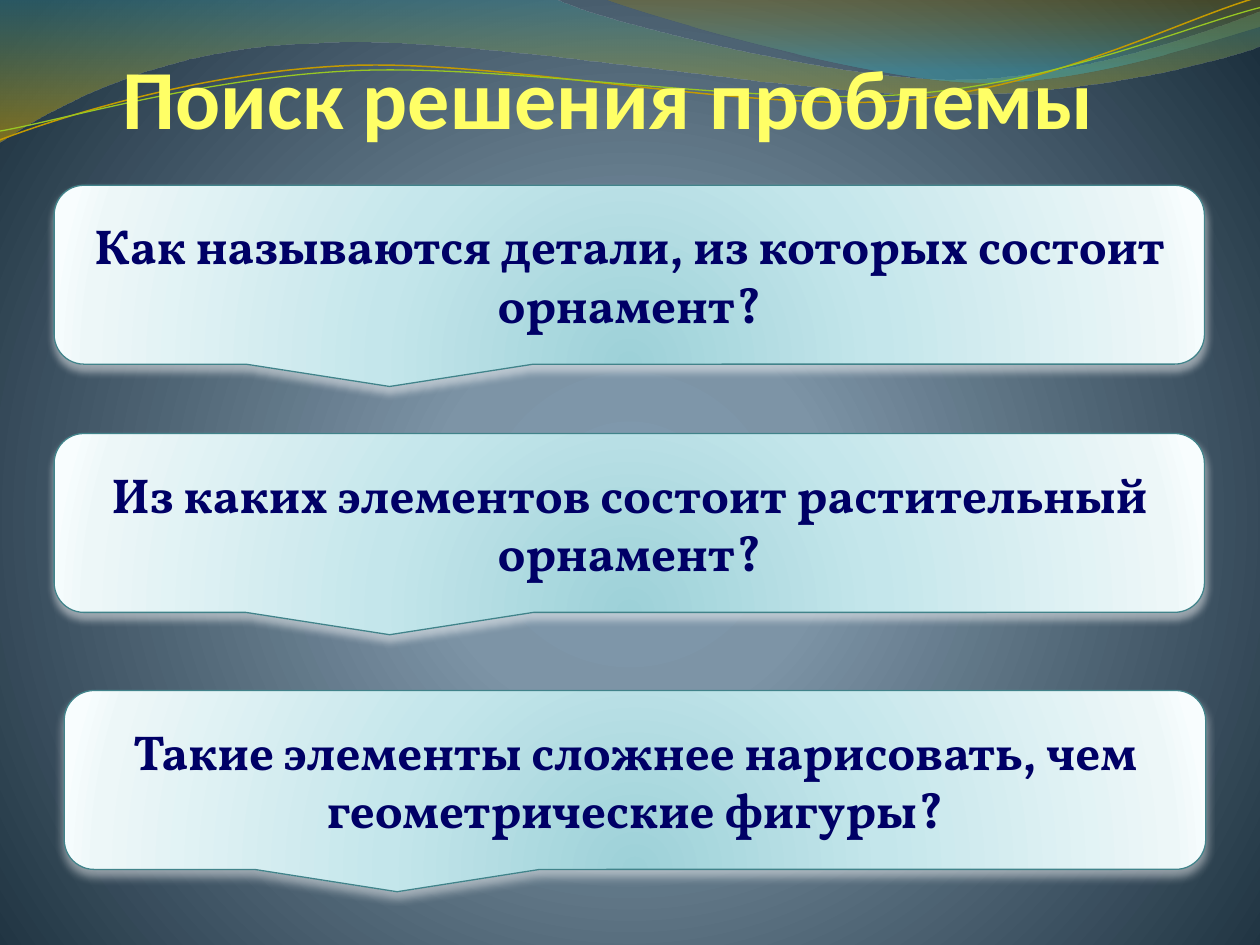
from math import cos, radians, sin

from lxml import etree
from pptx import Presentation
from pptx.dml.color import RGBColor
from pptx.enum.shapes import MSO_SHAPE
from pptx.enum.text import MSO_ANCHOR, PP_ALIGN
from pptx.oxml.ns import qn
from pptx.util import Inches, Pt

CALLOUT = MSO_SHAPE.ROUNDED_RECTANGULAR_CALLOUT
MIDDLE, BOTTOM = MSO_ANCHOR.MIDDLE, MSO_ANCHOR.BOTTOM
CENTER = PP_ALIGN.CENTER

YELLOW = RGBColor(0xFF, 0xFF, 0x66)
NAVY = RGBColor(0x00, 0x00, 0x66)
TEAL = RGBColor(0x41, 0x83, 0x8A)
ORANGE = RGBColor(0xC4, 0x9A, 0x00)
GREEN = RGBColor(0x98, 0xC7, 0x23)
WHITE = RGBColor(0xFF, 0xFF, 0xFF)

PAGE_STOPS = [(0, RGBColor(0x80, 0x9A, 0xAF), 100),
              (25, RGBColor(0x7D, 0x94, 0xA6), 100),
              (100, RGBColor(0x1C, 0x30, 0x3E), 100)]
CARD_STOPS = [(0, RGBColor(0x9D, 0xD1, 0xD8), 100),
              (43, RGBColor(0xC4, 0xE6, 0xEB), 100),
              (93, RGBColor(0xED, 0xF7, 0xF8), 100),
              (100, RGBColor(0xF8, 0xFD, 0xFE), 100)]
LEFT_STOPS = [(0, RGBColor(0x3B, 0x88, 0x90), 45),
              (100, RGBColor(0xC9, 0x9E, 0x00), 55)]
RIGHT_STOPS = [(0, RGBColor(0xA4, 0x81, 0x00), 30),
               (80, RGBColor(0x3E, 0xA9, 0xB4), 45)]

LEFT_WAVE = [
    [(0, 0)], [(4.4, -0.01)],
    [(4.76, 0.17), (6.64, 0.63), (7.58, 0.63)],
    [(8.53, 0.63), (9.58, 0.26), (10, 0.09)],
    [(10.01, 0.36)],
    [(9.83, 0.44), (8.7, 0.76), (7.46, 0.75)],
    [(6.22, 0.75), (3.82, 0.28), (2.57, 0.34)],
    [(1.29, 0.36), (0.46, 0.83), (-0.01, 1.13)],
    [(0, 0)],
]
RIGHT_WAVE = [
    [(4.79, -0.01)],
    [(5.09, 0.11), (6.82, 0.62), (7.69, 0.65)],
    [(8.56, 0.69), (9.61, 0.32), (10, 0.21)],
    [(10, 0)], [(4.79, -0.01)],
]
ORANGE_CURVE = [
    [(0, 1.11)],
    [(0.48, 0.93), (1.58, 0.57), (2.77, 0.52)],
    [(3.95, 0.47), (5.93, 0.89), (7.13, 0.8)],
    [(8.33, 0.71), (9.38, 0.15), (9.98, -0.02)],
]
GREEN_CURVE = [
    [(0, 1.04)],
    [(0.47, 0.96), (1.64, 0.61), (2.83, 0.56)],
    [(4.03, 0.51), (5.97, 0.84), (7.17, 0.75)],
    [(8.36, 0.67), (9.41, 0.21), (10, 0.06)],
]
CURVE_TILT = 357.3
QUESTIONS = [
    ("Как называются детали, из которых состоит орнамент?", (0.43, 1.47, 9.13, 1.42)),
    ("Из каких элементов состоит растительный орнамент?", (0.43, 3.44, 9.13, 1.42)),
    ("Такие элементы сложнее нарисовать, чем геометрические фигуры?",
     (0.51, 5.48, 9.06, 1.42)),
]


def add_color(parent, color, opacity):
    """Add a colour with an opacity in percent."""
    node = etree.SubElement(parent, qn("a:srgbClr"), val=str(color))
    if opacity < 100:
        etree.SubElement(node, qn("a:alpha"), val=str(opacity * 1000))


def set_gradient(owner, fill, stops, center=None):
    """Fill with a circular gradient around center, or a downward one."""
    fill.gradient()
    gradient = owner.element.find(".//" + qn("a:gradFill"))
    for child in list(gradient):
        gradient.remove(child)
    stop_list = etree.SubElement(gradient, qn("a:gsLst"))
    for position, color, opacity in stops:
        stop = etree.SubElement(stop_list, qn("a:gs"), pos=str(position * 1000))
        add_color(stop, color, opacity)
    if center:
        circle = etree.SubElement(gradient, qn("a:path"))
        circle.set("path", "circle")
        sides = {side: str(value * 1000) for side, value in zip("ltrb", center)}
        etree.SubElement(circle, qn("a:fillToRect"), **sides)
    else:
        etree.SubElement(gradient, qn("a:lin"), ang="5400000", scaled="0")


def turn(point, center, degrees):
    """Turn a point clockwise around a center."""
    x, y = point[0] - center[0], point[1] - center[1]
    cosine, sine = cos(radians(degrees)), sin(radians(degrees))
    return center[0] + x * cosine - y * sine, center[1] + x * sine + y * cosine


def add_outline(shapes, box, segments, closed, tilt=0):
    """Draw straight and cubic segments; the tilt is kept as rotation of the box."""
    left, top, width, height = box
    center = left + width / 2, top + height / 2
    points = [tuple(map(Inches, turn(point, center, -tilt)))
              for segment in segments for point in segment]
    builder = shapes.build_freeform(*points[0])
    builder.add_line_segments(points[1:], close=closed)
    shape = builder.convert_to_shape()
    lines = iter(shape.element.findall(".//" + qn("a:lnTo")))
    for segment in segments[1:]:
        first, *others = [next(lines) for _ in segment]
        if others:
            first.tag = qn("a:cubicBezTo")
        for line in others:
            first.append(line[0])
            line.getparent().remove(line)
    shape.rotation = tilt
    shape.shadow.inherit = False
    return shape


def add_waves(page):
    """Draw the two tinted waves and the group of two thin curves."""
    for box, segments, stops in (
            ((-0.01, -0.01, 10.02, 1.14), LEFT_WAVE, LEFT_STOPS),
            ((4.79, -0.01, 5.21, 0.7), RIGHT_WAVE, RIGHT_STOPS)):
        wave = add_outline(page.shapes, box, segments, True)
        set_gradient(wave, wave.fill, stops)
        wave.line.fill.background()
    group = page.shapes.add_group_shape()
    for box, segments, color, width in (
            ((-0.02, 0.22, 10.02, 0.71), ORANGE_CURVE, ORANGE, 0.85),
            ((-0.02, 0.3, 10.03, 0.58), GREEN_CURVE, GREEN, 0.75)):
        curve = add_outline(group.shapes, box, segments, False, CURVE_TILT)
        curve.fill.background()
        curve.line.color.rgb = color
        curve.line.width = Pt(width)


def write_text(shape, text, font, size, color, anchor):
    """Write one centred bold paragraph."""
    frame = shape.text_frame
    frame.word_wrap = True
    frame.vertical_anchor = anchor
    frame.text = text
    para = frame.paragraphs[0]
    para.alignment = CENTER
    span = para.runs[0]
    span.font.name = font
    span.font.size = Pt(size)
    span.font.bold = True
    span.font.color.rgb = color


def add_title(page, box):
    """Place the heading at the bottom of its box."""
    title = page.shapes.add_textbox(*map(Inches, box))
    frame = title.text_frame
    frame.margin_left = frame.margin_right = frame.margin_top = frame.margin_bottom = 0
    write_text(title, "Поиск решения проблемы", "Calibri", 48, YELLOW, BOTTOM)


def add_question(page, box, text):
    """Place one question in a shaded callout."""
    card = page.shapes.add_shape(CALLOUT, *map(Inches, box))
    set_gradient(card, card.fill, CARD_STOPS, (50, 130, 50, -30))
    card.line.color.rgb = TEAL
    card.line.width = Pt(0.75)
    card.shadow.inherit = False
    effects = card.element.spPr.find(qn("a:effectLst"))
    shadow = etree.SubElement(effects, qn("a:outerShdw"), blurRad=str(Pt(4.5)),
                              dist=str(Pt(3)), dir="5400000", rotWithShape="0")
    add_color(shadow, WHITE, 48)
    write_text(card, text, "Vollkorn", 28, NAVY, MIDDLE)


def main():
    """Build and save the deck."""
    deck = Presentation()
    deck.slide_width, deck.slide_height = Inches(10), Inches(7.5)
    page = deck.slides.add_slide(deck.slide_layouts[6])
    set_gradient(page, page.background.fill, PAGE_STOPS, (10, 110, 10, 100))
    add_waves(page)
    add_title(page, (0.58, 0.29, 8.5, 0.87))
    for text, box in QUESTIONS:
        add_question(page, box, text)
    deck.save("out.pptx")


if __name__ == "__main__":
    main()
